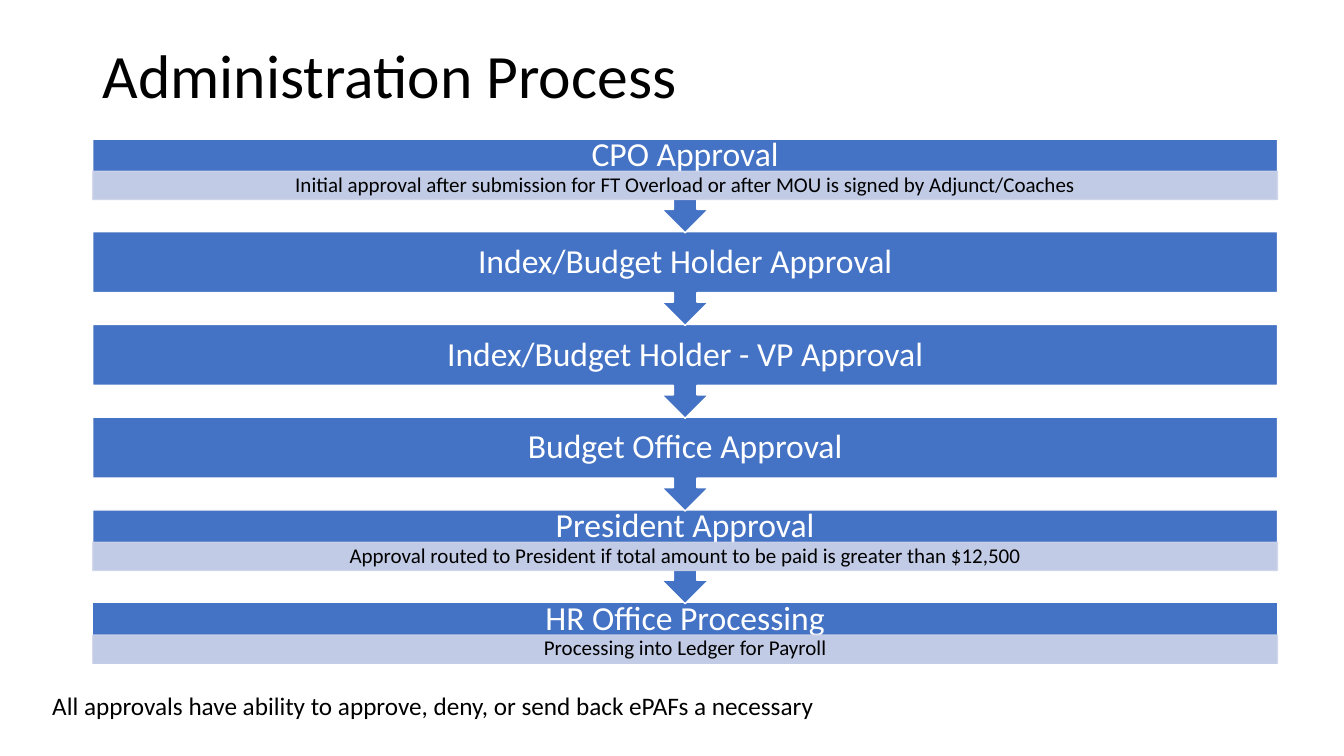
import dataclasses

import lxml.etree
import pptx
import pptx.dml.color
import pptx.enum.shapes
import pptx.enum.text
import pptx.oxml.ns
import pptx.util

SHAPE = pptx.enum.shapes.MSO_SHAPE
ALIGN = pptx.enum.text.PP_ALIGN
ANCHOR = pptx.enum.text.MSO_ANCHOR


@dataclasses.dataclass(frozen=True)
class Theme:
    font: str = "Calibri"
    ink: str = "000000"
    paper: str = "FFFFFF"
    step: str = "4472C4"
    detail: str = "CFD5EA"
    detail_opacity: int = 90
    title_size: int = 44
    step_size: int = 24
    note_size: int = 18
    detail_size: int = 15


THEME = Theme()
SLIDE_WIDTH, SLIDE_HEIGHT = 13.33, 7.5

# Boxes: left, top, width, height in inches
TITLE_BOX = (0.92, 0.4, 11.5, 1.45)
PROCESS_BOX = (0.92, 1.38, 11.75, 5.22)
NOTE_BOX = (0.42, 6.8, 8.26, 0.4)

# Rows of the process
STEP_PITCH = 0.92
CALLOUT_HEIGHT = 0.93
BODY_HEIGHT = 0.61
HEADING_HEIGHT = 0.33
DETAIL_HEIGHT = 0.28

STEPS = [
    ("CPO Approval",
     "Initial approval after submission for FT Overload or after MOU is signed by Adjunct/Coaches"),
    ("Index/Budget Holder Approval", None),
    ("Index/Budget Holder - VP Approval", None),
    ("Budget Office Approval", None),
    ("President Approval",
     "Approval routed to President if total amount to be paid is greater than $12,500"),
    ("HR Office Processing", "Processing into Ledger for Payroll"),
]


def inches(box):
    return [pptx.util.Inches(length) for length in box]


def rgb(color):
    return pptx.dml.color.RGBColor.from_string(color)


def add_text(slide, box, text, *, size, color=THEME.ink, align=ALIGN.LEFT,
             anchor=ANCHOR.TOP, line_spacing=1.0, insets=(0.1, 0.05)):
    frame = slide.shapes.add_textbox(*inches(box)).text_frame
    frame.word_wrap = True
    frame.vertical_anchor = anchor
    frame.margin_left = frame.margin_right = pptx.util.Inches(insets[0])
    frame.margin_top = frame.margin_bottom = pptx.util.Inches(insets[1])
    paragraph = frame.paragraphs[0]
    paragraph.alignment = align
    paragraph.line_spacing = line_spacing
    run = paragraph.add_run()
    run.text = text
    run.font.name = THEME.font
    run.font.size = pptx.util.Pt(size)
    run.font.color.rgb = rgb(color)


def add_block(slide, kind, box, fill, line, opacity=100):
    shape = slide.shapes.add_shape(kind, *inches(box))
    shape.shadow.inherit = False
    shape.fill.solid()
    shape.fill.fore_color.rgb = rgb(fill)
    shape.line.color.rgb = rgb(line)
    shape.line.width = pptx.util.Pt(1)
    if opacity < 100:
        qualified = pptx.oxml.ns.qn
        for color in shape.element.spPr.iter(qualified("a:srgbClr")):
            alpha = lxml.etree.SubElement(color, qualified("a:alpha"))
            alpha.set("val", str(opacity * 1000))


def add_step(slide, box, heading, detail, is_last):
    left, top, width, height = box
    kind = SHAPE.RECTANGLE if is_last else SHAPE.DOWN_ARROW_CALLOUT
    add_block(slide, kind, box, THEME.step, THEME.paper)

    # Heading fills the body unless a detail band sits below it
    heading_height = HEADING_HEIGHT if detail else BODY_HEIGHT
    centred = dict(align=ALIGN.CENTER, anchor=ANCHOR.MIDDLE, line_spacing=0.9)
    add_text(slide, (left, top, width, heading_height), heading,
             size=THEME.step_size, color=THEME.paper, insets=(0.19, 0), **centred)
    if detail:
        detail_box = (left, top + HEADING_HEIGHT - 0.01, width, DETAIL_HEIGHT)
        add_block(slide, SHAPE.RECTANGLE, detail_box, THEME.detail, THEME.detail,
                  THEME.detail_opacity)
        add_text(slide, detail_box, detail, size=THEME.detail_size,
                 insets=(0.12, 0.02), **centred)


def add_process(slide, box, steps):
    left, top, width, _ = box
    last = len(steps) - 1
    # From the bottom up, so that each arrow tip lies over the next step
    for index in range(last, -1, -1):
        heading, detail = steps[index]
        height = BODY_HEIGHT if index == last else CALLOUT_HEIGHT
        step_box = (left, top + index * STEP_PITCH, width, height)
        add_step(slide, step_box, heading, detail, index == last)


def main():
    presentation = pptx.Presentation()
    presentation.slide_width = pptx.util.Inches(SLIDE_WIDTH)
    presentation.slide_height = pptx.util.Inches(SLIDE_HEIGHT)
    slide = presentation.slides.add_slide(presentation.slide_layouts[6])

    # Title, process and closing note
    add_text(slide, TITLE_BOX, "Administration Process", size=THEME.title_size,
             line_spacing=0.9)
    add_process(slide, PROCESS_BOX, STEPS)
    add_text(slide, NOTE_BOX,
             "All approvals have ability to approve, deny, or send back ePAFs a necessary",
             size=THEME.note_size)
    presentation.save("out.pptx")


if __name__ == "__main__":
    main()
